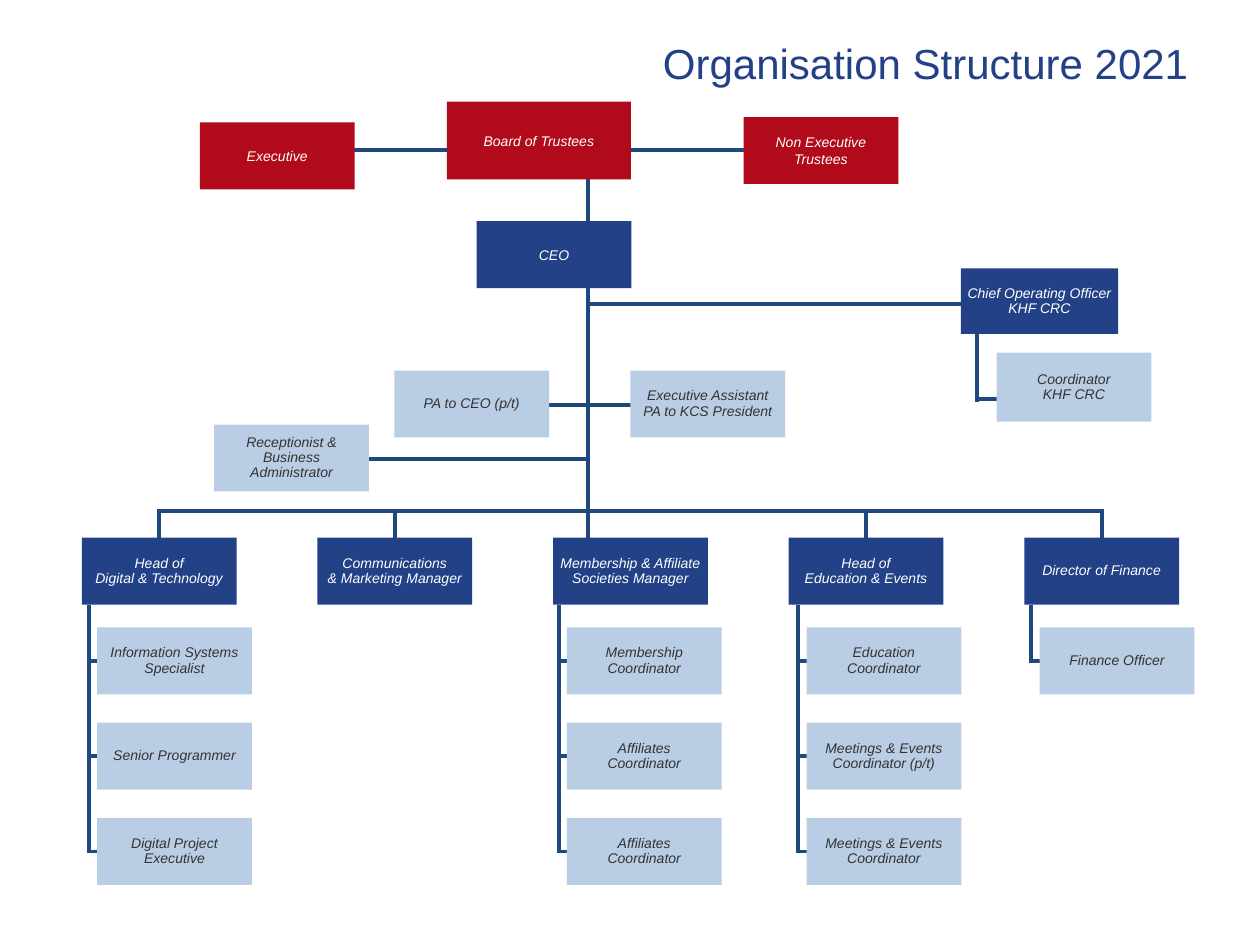
from pptx import Presentation
from pptx import util as u
from pptx.dml.color import RGBColor
from pptx.enum import shapes, text
from pptx.oxml.ns import qn
from lxml import etree

THEME = {
    "font": "Arial", "title": 24, "body": 8, "line": 2.25,
    "rule": "1F497D", "ink": "224186",
    # level: fill, font colour, line spacing
    "board": ("B10B1B", "FFFFFF", 1.0),
    "chief": ("224186", "FFFFFF", 1.0),
    "lead": ("224186", "FFFFFF", 0.9),
    "staff": ("B9CDE5", "333333", 0.9),
}

# All lengths in cm. In a label, "\n" starts a paragraph and "|" breaks a line.
TITLE = "Organisation Structure 2021"
BOX = (3.12, 1.35)
TOP = [  # label, level, left, top, size
    ("Executive", "board", 4.03, 2.47, BOX),
    ("Board of Trustees", "board", 9.01, 2.05, (3.71, 1.57)),
    ("Non Executive\nTrustees", "board", 14.99, 2.36, BOX),
    ("CEO", "chief", 9.61, 4.46, BOX),
    ("Chief Operating Officer\nKHF CRC", "lead", 19.37, 5.41, (3.17, 1.32)),
    ("Coordinator\nKHF CRC", "staff", 20.09, 7.11, (3.12, 1.39)),
    ("PA to CEO (p/t)", "staff", 7.95, 7.47, BOX),
    ("Executive Assistant|PA to KCS President", "staff", 12.71, 7.47, BOX),
    ("Receptionist &\nBusiness|Administrator", "staff", 4.32, 8.56, BOX),
]
TEAMS = [  # head, indent of reports, reports
    ("Head of\nDigital & Technology", 0.31,
     ["Information Systems Specialist", "Senior Programmer",
      "Digital Project\nExecutive"]),
    ("Communications|& Marketing Manager", 0, []),
    ("Membership & Affiliate\nSocieties Manager", 0.28,
     ["Membership\nCoordinator", "Affiliates\nCoordinator",
      "Affiliates\nCoordinator"]),
    ("Head of\nEducation & Events", 0.36,
     ["Education|Coordinator", "Meetings & Events Coordinator (p/t)",
      "Meetings & Events Coordinator"]),
    ("Director of Finance", 0.31, ["Finance Officer"]),
]
LEFT, PITCH, HEAD = 1.65, 4.75, 10.84   # team columns
ROW, STEP, STUB = 12.65, 1.92, 0.17     # reports below each head
SPINE, BUS, EDGE = 11.86, 10.31, 0.04
SIDE = 19.69
LINKS = [  # from x, y to x, y
    (6.99, 3.02, 15.14, 3.02),
    (SPINE, 3.53, SPINE, HEAD),
    (SPINE, 6.12, 19.43, 6.12),
    (9.91, 8.16, 13.41, 8.16),
    (7.44, 9.25, SPINE, 9.25),
    (SIDE, 6.73, SIDE, 8.1),
    (SIDE, 8.04, 20.32, 8.04),
]


def color(code):
    return RGBColor.from_string(code)


def link(slide, *ends):
    line = slide.shapes.add_connector(
        shapes.MSO_CONNECTOR.STRAIGHT, *[u.Cm(n) for n in ends])
    line.line.color.rgb = color(THEME["rule"])
    line.line.width = u.Pt(THEME["line"])
    etree.SubElement(line._element.spPr, qn("a:effectLst"))


def write(frame, label, size, ink, space=1.0, slant=False):
    """Fill a frame with centred paragraphs, run by run."""
    for i, part in enumerate(label.split("\n")):
        para = frame.paragraphs[0] if i == 0 else frame.add_paragraph()
        para.alignment = text.PP_ALIGN.CENTER
        para.line_spacing = space
        for j, words in enumerate(part.split("|")):
            if j:
                para.add_line_break()
            run = para.add_run()
            run.text = words
            font = run.font
            font.name, font.size = THEME["font"], u.Pt(size)
            font.italic = slant
            font.color.rgb = color(ink)


def box(slide, label, level, x, y, size=BOX):
    fill, ink, space = THEME[level]
    rect = slide.shapes.add_shape(
        shapes.MSO_SHAPE.RECTANGLE, *[u.Cm(n) for n in (x, y, *size)])
    rect.shadow.inherit = False
    rect.fill.solid()
    rect.fill.fore_color.rgb = color(fill)
    rect.line.fill.background()
    frame = rect.text_frame
    frame.word_wrap = True
    frame.vertical_anchor = text.MSO_ANCHOR.MIDDLE
    frame.margin_left = frame.margin_right = 0
    frame.margin_top = frame.margin_bottom = 0
    write(frame, label, THEME["body"], ink, space, True)


def team(slide, col, head, indent, reports):
    """Draw one column: drop from the bus, head, and reports on a rail."""
    x = LEFT + col * PITCH
    mid = x + BOX[0] / 2
    if col != len(TEAMS) // 2:      # the spine itself feeds the middle head
        link(slide, mid, BUS, mid, HEAD)
    left = x + indent
    rail = left - STUB
    tops = [ROW + i * STEP for i in range(len(reports))]
    mids = [y + BOX[1] / 2 for y in tops]
    if reports:
        link(slide, rail, HEAD + BOX[1], rail, mids[-1] + EDGE)
    for y in mids:
        link(slide, rail, y, left, y)
    box(slide, head, "lead", x, HEAD)
    for label, y in zip(reports, tops):
        box(slide, label, "staff", left, y)


def main():
    deck = Presentation()
    deck.slide_width, deck.slide_height = u.Cm(25.4), u.Cm(19.05)
    slide = deck.slides.add_slide(deck.slide_layouts[6])
    for ends in LINKS:
        link(slide, *ends)
    first = LEFT + BOX[0] / 2
    last = first + PITCH * (len(TEAMS) - 1)
    link(slide, first - EDGE, BUS, last + EDGE, BUS)
    for item in TOP:
        box(slide, *item)
    for col, item in enumerate(TEAMS):
        team(slide, col, *item)
    head = slide.shapes.add_textbox(
        u.Cm(12.73), u.Cm(0.64), u.Cm(11.86), u.Cm(1.28))
    head.text_frame.word_wrap = True
    write(head.text_frame, TITLE, THEME["title"], THEME["ink"])
    deck.save("out.pptx")


if __name__ == "__main__":
    main()
